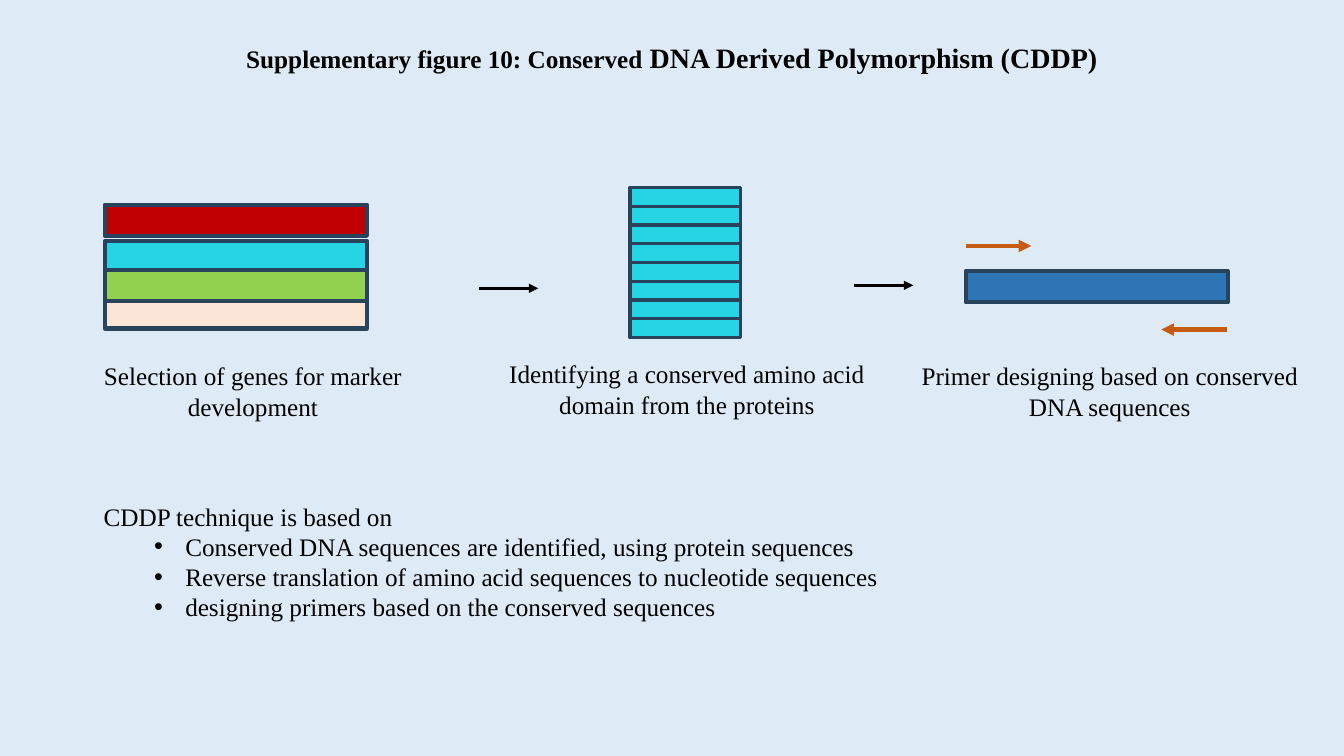
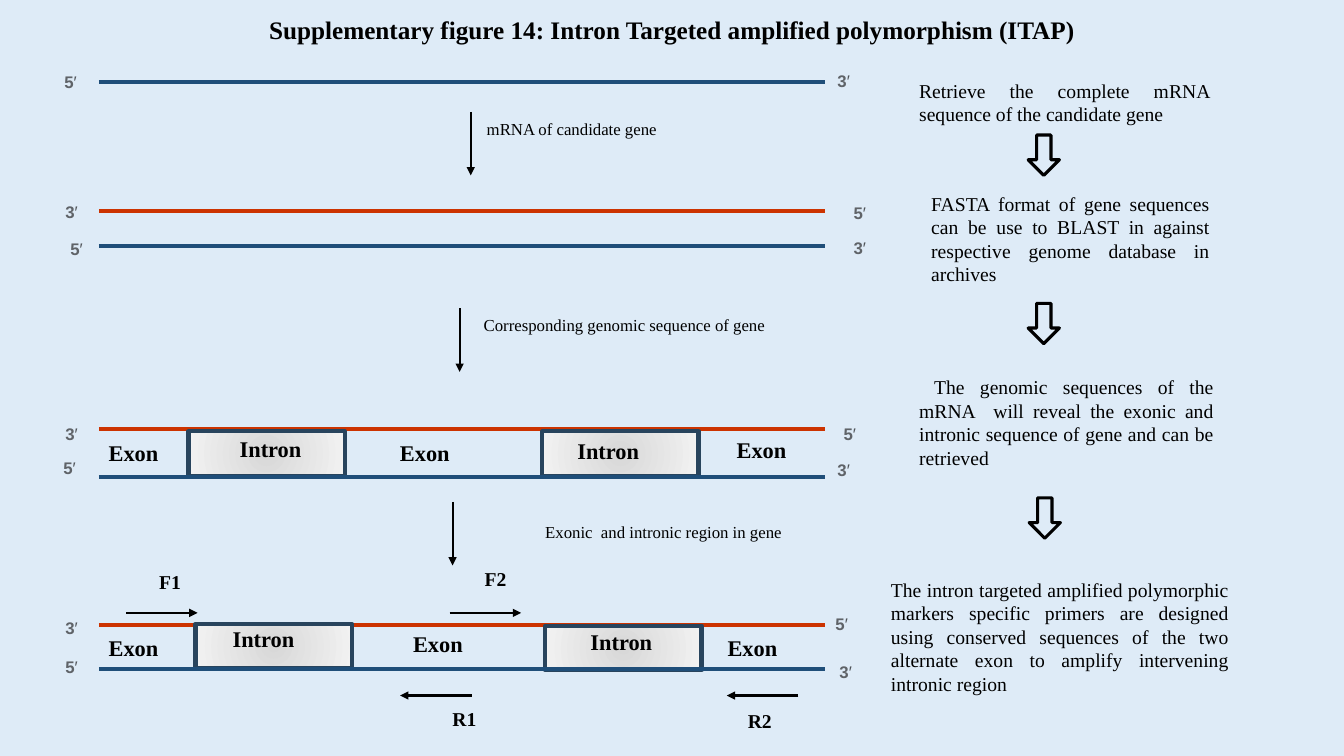
from dataclasses import dataclass

from lxml import etree
from pptx import Presentation
from pptx.dml.color import RGBColor
from pptx.enum.shapes import MSO_CONNECTOR, MSO_SHAPE
from pptx.enum.text import MSO_AUTO_SIZE, PP_ALIGN
from pptx.oxml.ns import qn
from pptx.util import Inches, Pt

RECT = MSO_SHAPE.RECTANGLE
DOWN = MSO_SHAPE.DOWN_ARROW
LINE = MSO_CONNECTOR.STRAIGHT
FIT = MSO_AUTO_SIZE.SHAPE_TO_FIT_TEXT
LEFT, MID, FULL = PP_ALIGN.LEFT, PP_ALIGN.CENTER, PP_ALIGN.JUSTIFY

COLS, ROWS = 133.33, 75
CELL = Inches(0.1)


@dataclass(frozen=True)
class Theme:
    back: str = "DEEBF7"
    ink: str = "000000"
    edge: str = "28445D"
    red: str = "C00000"
    cyan: str = "25D5E3"
    green: str = "92D050"
    cream: str = "FBE5D6"
    blue: str = "2E75B6"
    primer: str = "C55A11"
    sense: str = "CC3300"
    anti: str = "1F4E79"
    core: str = "D8D8D8"
    rim: str = "F2F2F2"
    digit: str = "5F6368"
    prime: str = "4D5156"
    serif: str = "Times New Roman"
    sans: str = "Arial"
    large: int = 20
    body: int = 18
    gene: int = 16
    step: int = 14
    small: int = 12
    thick: float = 3
    mid: float = 2.25
    thin: float = 1.5


def grid(*cells):
    return [round(c * CELL) for c in cells]


def rgb(code):
    return RGBColor.from_string(code)


class Deck:
    def __init__(self, theme):
        self.theme = theme
        self.file = Presentation()
        self.file.slide_width, self.file.slide_height = grid(COLS, ROWS)
        self.slide = None

    def page(self):
        self.slide = self.file.slides.add_slide(self.file.slide_layouts[6])
        fill = self.slide.background.fill
        fill.solid()
        fill.fore_color.rgb = rgb(self.theme.back)

    def shape(self, kind, x, y, w, h, fill=None, edge=None, width=None):
        item = self.slide.shapes.add_shape(kind, *grid(x, y, w, h))
        item.shadow.inherit = False
        if fill:
            item.fill.solid()
            item.fill.fore_color.rgb = rgb(fill)
        else:
            item.fill.background()
        item.line.color.rgb = rgb(edge or self.theme.edge)
        item.line.width = Pt(width or self.theme.thick)
        return item

    def intron(self, x, y):
        box = self.shape(RECT, x, y, 15.5, 4.4)
        box.fill.gradient()
        for stop, code in zip(box.fill.gradient_stops, (self.theme.core, self.theme.rim)):
            stop.color.rgb = rgb(code)
        grad = box._element.spPr.find(qn("a:gradFill"))
        grad.remove(grad.find(qn("a:lin")))
        ring = etree.SubElement(grad, qn("a:path"), path="circle")
        etree.SubElement(ring, qn("a:fillToRect"), l="50000", t="50000", r="50000", b="50000")

    def block(self, x, y):
        item = self.shape(DOWN, x, y, 3.1, 4, edge=self.theme.ink, width=self.theme.mid)
        item.adjustments[0] = 0.46
        item.adjustments[1] = 0.5

    def line(self, x, y, dx, dy, code, width, head=True):
        item = self.slide.shapes.add_connector(LINE, *grid(x, y, x + dx, y + dy))
        item.line.color.rgb = rgb(code)
        item.line.width = Pt(width)
        props = item._element.spPr
        if head:
            etree.SubElement(props.find(qn("a:ln")), qn("a:tailEnd"), type="triangle")
        etree.SubElement(props, qn("a:effectLst"))

    def strand(self, y, code):
        self.line(9.8, y, 72, 0, code, self.theme.thick, head=False)

    def arrow(self, x, y, dx, dy):
        self.line(x, y, dx, dy, self.theme.ink, self.theme.thin)

    def run(self, para, words, size, bold=False, code=None, font=None):
        run = para.add_run()
        run.text = words
        run.font.size = Pt(size)
        run.font.bold = bold
        run.font.name = font or self.theme.serif
        run.font.color.rgb = rgb(code or self.theme.ink)

    def frame(self, x, y, w, h, align=LEFT):
        frame = self.slide.shapes.add_textbox(*grid(x, y, w, h)).text_frame
        frame.word_wrap = True
        frame.auto_size = FIT
        frame.paragraphs[0].alignment = align
        return frame

    def text(self, x, y, w, h, words, size, bold=False, align=LEFT):
        frame = self.frame(x, y, w, h, align)
        self.run(frame.paragraphs[0], words, size, bold)
        return frame

    def title(self, y, h, *runs):
        para = self.frame(0, y, COLS, h, MID).paragraphs[0]
        for words, size in runs:
            self.run(para, words, size, bold=True)

    def bullet(self, frame, words):
        para = frame.add_paragraph()
        para.level = 1
        self.run(para, words, self.theme.body)
        left, hang = grid(8.1, -3.1)
        props = para._p.get_or_add_pPr()
        props.set("marL", str(left))
        props.set("indent", str(hang))
        etree.SubElement(props, qn("a:buFont"), typeface=self.theme.sans)
        etree.SubElement(props, qn("a:buChar"), char="•")

    def end(self, x, y, digit):
        para = self.frame(x, y, 3.7, 3.1).paragraphs[0]
        theme = self.theme
        self.run(para, digit, theme.small, True, theme.digit, theme.sans)
        self.run(para, "′", theme.small, False, theme.prime, theme.sans)


def cddp(deck):
    look = deck.theme
    deck.page()
    deck.title(3.5, 4.4, ("Supplementary figure 10: Conserved", look.body),
               (" DNA Derived Polymorphism (CDDP)", look.large))

    for y, code in ((29.5, look.cream), (20.3, look.red), (23.9, look.cyan), (26.8, look.green)):
        deck.shape(RECT, 10.4, y, 26, 3.1, code)
    for row in range(8):
        deck.shape(RECT, 62.5, 18.6 + 1.86 * row, 11, 1.9, look.cyan, width=look.mid)
    deck.shape(RECT, 95.8, 26.9, 26, 3.1, look.blue)

    for x, y, dx in ((121.7, 32.7, -6.5), (95.8, 24.4, 6.5)):
        deck.line(x, y, dx, 0, look.primer, look.thick)
    for x, y in ((47.5, 28.6), (84.7, 28.3)):
        deck.line(x, y, 5.9, 0, look.ink, look.mid)

    for x, y, w, words in (
        (6.8, 35.3, 36.6, "Selection of genes for marker development"),
        (49.3, 35.1, 37.7, "Identifying a conserved amino acid domain from the proteins"),
        (89.6, 35.3, 41, "Primer designing based on conserved DNA sequences"),
    ):
        deck.text(x, y, w, 7.1, words, look.body, align=MID)

    notes = deck.text(9.3, 49.2, 80, 13.1, "CDDP technique is based on", look.body)
    for words in (
        "Conserved DNA sequences are identified, using protein sequences",
        "Reverse translation of amino acid sequences to nucleotide sequences",
        "designing primers based on the conserved sequences",
    ):
        deck.bullet(notes, words)


def itap(deck):
    look = deck.theme
    deck.page()
    deck.title(0.9, 4, (
        "Supplementary figure 14: Intron Targeted amplified polymorphism (ITAP)", look.body))

    for y in (20.9, 42.6, 62):
        deck.strand(y, look.sense)
    for x, y in ((18.7, 42.8), (53.8, 42.8), (19.4, 61.9), (54.1, 62.1)):
        deck.intron(x, y)
    for y in (8.1, 24.4, 47.3, 66.4):
        deck.strand(y, look.anti)

    for digit, spots in (
        ("5", ((5.4, 6.6), (6, 23.2), (5.3, 44.9), (5.5, 64.7),
               (83.7, 19.6), (82.7, 41.5), (81.9, 60.4))),
        ("3", ((82.1, 6.5), (83.7, 23.1), (82.1, 45.1), (82.3, 65.2),
               (5.5, 19.5), (5.5, 41.5), (5.5, 60.8))),
    ):
        for x, y in spots:
            deck.end(x, y, digit)

    for words, spots in (
        ("Intron", ((22.8, 42.7), (56.3, 42.9), (22.1, 61.5), (57.6, 61.8))),
        ("Exon", ((9.8, 43.1), (38.7, 43.1), (72.1, 42.8),
                  (9.8, 62.4), (40, 62), (71.2, 62.4))),
    ):
        for x, y in spots:
            deck.text(x, y, 11.3, 3.7, words, look.gene, bold=True)

    for x, y in ((46.7, 11.1), (45.6, 30.6), (44.9, 49.8)):
        deck.arrow(x, y, 0, 6.3)
    for x, y, w, words in (
        (47.3, 11.3, 29.5, "mRNA of candidate gene"),
        (47, 30.7, 34, "Corresponding genomic sequence of gene"),
        (53.1, 51.3, 29.5, "Exonic  and intronic region in gene"),
    ):
        deck.text(x, y, w, 3.1, words, look.small)

    for x, y, dx in ((12.5, 60.8, 7.1), (44.6, 60.8, 7.1), (46.8, 69, -7.1), (79.2, 69, -7.1)):
        deck.arrow(x, y, dx, 0)
    for x, y, words in ((14.8, 56, "F1"), (47.1, 55.8, "F2"), (43.9, 69.6, "R1"), (73.2, 69.8, "R2")):
        deck.text(x, y, 7, 3.4, words, look.step, bold=True)

    for x, y, w, h, words in (
        (90.2, 7.3, 30.8, 5.7, "Retrieve the complete mRNA sequence of the candidate gene"),
        (91.4, 18.5, 29.6, 10.4, "FASTA format of gene sequences can be use to BLAST in against "
         "respective genome database in archives"),
        (90.2, 36.7, 31.2, 10.4, " The genomic sequences of the mRNA  will reveal the exonic "
         "and intronic sequence of gene and can be retrieved"),
        (87.4, 56.8, 35.5, 12.8, "The intron targeted amplified polymorphic markers specific "
         "primers are designed using conserved sequences of the two alternate exon to amplify "
         "intervening intronic region"),
    ):
        deck.text(x, y, w, h, words, look.step, align=FULL)
    for x, y in ((102, 13.4), (102, 30.1), (102.1, 49.4)):
        deck.block(x, y)


def main():
    deck = Deck(Theme())
    cddp(deck)
    itap(deck)
    deck.file.save("out.pptx")


if __name__ == "__main__":
    main()
